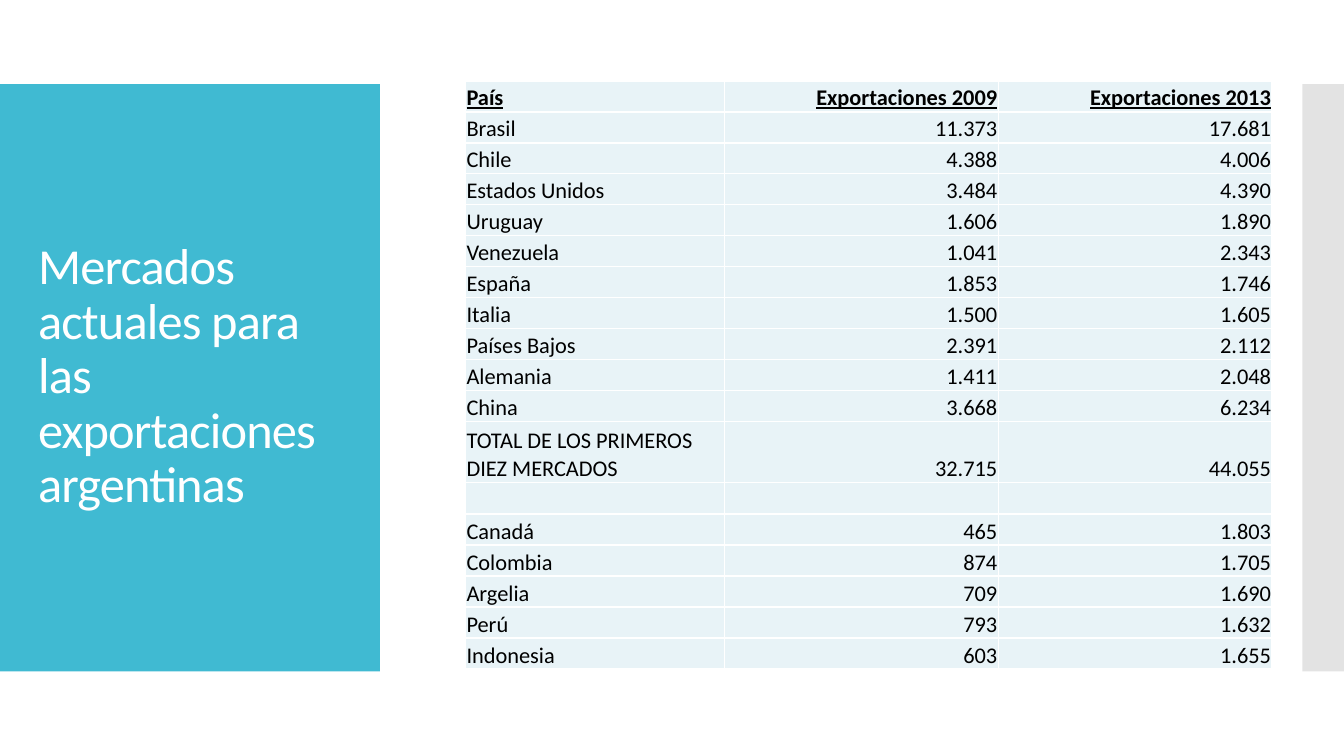
from lxml.etree import SubElement
from pptx import Presentation
from pptx.dml.color import RGBColor
from pptx.enum.shapes import MSO_SHAPE
from pptx.enum.text import MSO_ANCHOR, MSO_AUTO_SIZE, PP_ALIGN
from pptx.oxml.ns import qn
from pptx.util import Pt

COLORS = {
    "panel": "40BAD2",
    "strip": "C8C8C8",
    "cell": "E8F3F7",
    "white": "FFFFFF",
    "black": "000000",
}
FONT = "Calibri"

MARKETS = [
    ("País", "Exportaciones 2009", "Exportaciones 2013"),
    ("Brasil", "11.373", "17.681"),
    ("Chile", "4.388", "4.006"),
    ("Estados Unidos", "3.484", "4.390"),
    ("Uruguay", "1.606", "1.890"),
    ("Venezuela", "1.041", "2.343"),
    ("España", "1.853", "1.746"),
    ("Italia", "1.500", "1.605"),
    ("Países Bajos", "2.391", "2.112"),
    ("Alemania", "1.411", "2.048"),
    ("China", "3.668", "6.234"),
    ("TOTAL DE LOS PRIMEROS DIEZ MERCADOS", "32.715", "44.055"),
    ("", "", ""),
    ("Canadá", "465", "1.803"),
    ("Colombia", "874", "1.705"),
    ("Argelia", "709", "1.690"),
    ("Perú", "793", "1.632"),
    ("Indonesia", "603", "1.655"),
]
TOTAL_ROW = 11
ROW_HEIGHT, TOTAL_HEIGHT = 22.14, 43.2
COLUMN_WIDTHS = [185, 195.5, 195.5]


def style_run(run, size, color):
    run.font.name = FONT
    run.font.size = Pt(size)
    run.font.color.rgb = RGBColor.from_string(COLORS[color])


def format_cell(cell):
    """White 1 pt borders, pale fill, tight margins, text at the bottom."""
    properties = cell._tc.get_or_add_tcPr()
    for side in ("lnL", "lnR", "lnT", "lnB"):
        border = SubElement(properties, qn(f"a:{side}"), w=str(Pt(1)))
        fill = SubElement(border, qn("a:solidFill"))
        SubElement(fill, qn("a:srgbClr"), val=COLORS["white"])
    cell.fill.solid()
    cell.fill.fore_color.rgb = RGBColor.from_string(COLORS["cell"])
    cell.margin_left = cell.margin_right = cell.margin_top = Pt(0.7)
    cell.margin_bottom = Pt(0)
    cell.vertical_anchor = MSO_ANCHOR.BOTTOM


presentation = Presentation()
presentation.slide_width, presentation.slide_height = Pt(960), Pt(540)
slide = presentation.slides.add_slide(presentation.slide_layouts[5])

# Title
title = slide.shapes.title
title.left, title.top, title.width, title.height = Pt(20), Pt(88.5), Pt(232), Pt(362)
heading = title.text_frame
heading.text = "Mercados actuales para las exportaciones argentinas"
heading.word_wrap = True
heading.auto_size = MSO_AUTO_SIZE.NONE
heading.vertical_anchor = MSO_ANCHOR.MIDDLE
heading.paragraphs[0].alignment = PP_ALIGN.LEFT
heading.paragraphs[0].line_spacing = 0.9
heading_run = heading.paragraphs[0].runs[0]
style_run(heading_run, 36, "white")
heading_run.font._element.set("spc", "-60")

# Side panels, placed behind the title
for left, width, color in [(0, 271.3, "panel"), (930.3, 29.7, "strip")]:
    panel = slide.shapes.add_shape(
        MSO_SHAPE.RECTANGLE, Pt(left), Pt(60), Pt(width), Pt(419.5))
    panel.shadow.inherit = False
    panel.line.fill.background()
    panel.fill.solid()
    panel.fill.fore_color.rgb = RGBColor.from_string(COLORS[color])
    if color == "strip":
        strip_color = panel.element.spPr.find(".//" + qn("a:srgbClr"))
        SubElement(strip_color, qn("a:alpha"), val="50000")
    title.element.addprevious(panel.element)

# Export table
exports = slide.shapes.add_table(
    len(MARKETS), len(COLUMN_WIDTHS), Pt(332.6), Pt(57.8), Pt(sum(COLUMN_WIDTHS)),
    Pt(ROW_HEIGHT * (len(MARKETS) - 1) + TOTAL_HEIGHT)).table
exports.first_row = exports.horz_banding = False
for column, width in zip(exports.columns, COLUMN_WIDTHS):
    column.width = Pt(width)

for row_index, market in enumerate(MARKETS):
    exports.rows[row_index].height = Pt(
        TOTAL_HEIGHT if row_index == TOTAL_ROW else ROW_HEIGHT)
    for column_index, value in enumerate(market):
        cell = exports.cell(row_index, column_index)
        format_cell(cell)
        if not value:
            continue
        cell.text_frame.text = value
        paragraph = cell.text_frame.paragraphs[0]
        paragraph.alignment = PP_ALIGN.RIGHT if column_index else PP_ALIGN.LEFT
        run = paragraph.runs[0]
        style_run(run, 16, "black")
        run.font.bold = run.font.underline = row_index == 0

presentation.save("out.pptx")
